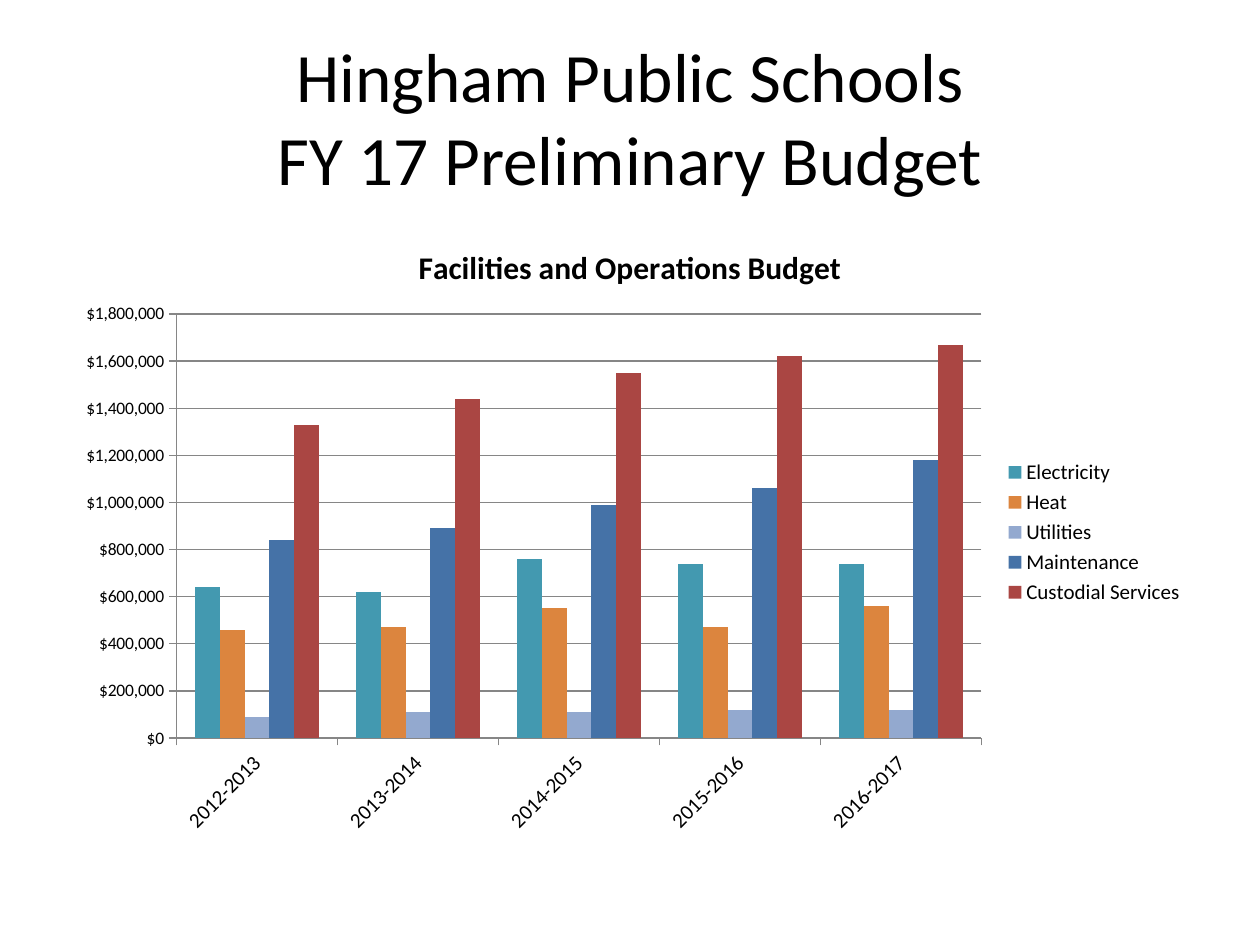
from lxml import etree
from pptx import Presentation
from pptx.chart.data import CategoryChartData
from pptx.dml.color import RGBColor
from pptx.enum import chart as charts, text
from pptx.oxml import parse_xml
from pptx.oxml.ns import nsdecls, qn
from pptx.util import Pt

FONT = "Calibri"
BLACK = RGBColor(0x00, 0x00, 0x00)
GRAY = RGBColor(0x86, 0x86, 0x86)
TEAL = RGBColor(0x43, 0x99, 0xB0)
ORANGE = RGBColor(0xDC, 0x85, 0x3E)
LIGHT_BLUE = RGBColor(0x93, 0xA9, 0xCF)
BLUE = RGBColor(0x45, 0x72, 0xA7)
RED = RGBColor(0xAA, 0x46, 0x43)

YEARS = [f"{year}-{year + 1}" for year in range(2012, 2017)]
BUDGETS = [
    ("Electricity", TEAL, (640000, 620000, 760000, 740000, 740000)),
    ("Heat", ORANGE, (460000, 470000, 550000, 470000, 560000)),
    ("Utilities", LIGHT_BLUE, (90000, 110000, 110000, 120000, 120000)),
    ("Maintenance", BLUE, (840000, 890000, 990000, 1060000, 1180000)),
    ("Custodial Services", RED, (1330000, 1440000, 1550000, 1620000, 1670000)),
]


def set_font(font, size, bold=False):
    font.name = FONT
    font.size = Pt(size)
    font.bold = bold
    font.color.rgb = BLACK


def write_text(frame, wording, size, bold=False, align=text.PP_ALIGN.CENTER):
    paragraph = frame.paragraphs[0]
    paragraph.text = wording
    paragraph.alignment = align
    for run in paragraph.runs:
        set_font(run.font, size, bold)


def add_title(slide, wording):
    box = slide.shapes.add_textbox(Pt(36), Pt(21.6), Pt(648), Pt(90))
    box.text_frame.word_wrap = True
    box.text_frame.vertical_anchor = text.MSO_ANCHOR.MIDDLE
    write_text(box.text_frame, wording, size=39.6)


def place_plot(chart, **fractions):
    """Fix the inner plot area as fractions of the chart's size."""
    plot_area = chart._chartSpace.chart.plotArea
    for old in plot_area.findall(qn("c:layout")):
        plot_area.remove(old)
    layout = parse_xml(
        f'<c:layout {nsdecls("c")}><c:manualLayout><c:layoutTarget val="inner"/>'
        '<c:xMode val="edge"/><c:yMode val="edge"/></c:manualLayout></c:layout>')
    for name, value in fractions.items():
        etree.SubElement(layout[0], qn(f"c:{name}")).set("val", str(value))
    plot_area.insert(0, layout)


def style_axis(axis, size):
    set_font(axis.tick_labels.font, size)
    axis.major_tick_mark = charts.XL_TICK_MARK.OUTSIDE
    axis.minor_tick_mark = charts.XL_TICK_MARK.NONE
    axis.format.line.color.rgb = GRAY
    axis.format.line.width = Pt(0.75)


def style_axes(chart):
    years, dollars = chart.category_axis, chart.value_axis
    style_axis(years, 12)
    years._element.txPr.bodyPr.set("rot", "-2700000")
    style_axis(dollars, 10)
    dollars.minimum_scale = 0
    dollars.maximum_scale = 1800000
    dollars.major_unit = 200000
    dollars.tick_labels.number_format = '"$"#,##0'
    dollars.tick_labels.number_format_is_linked = False
    dollars.major_gridlines.format.line.color.rgb = GRAY
    dollars.major_gridlines.format.line.width = Pt(0.75)


def add_budget_chart(slide):
    data = CategoryChartData(number_format='"$"#,##0')
    data.categories = YEARS
    for name, _, amounts in BUDGETS:
        data.add_series(name, amounts)
    chart = slide.shapes.add_chart(
        charts.XL_CHART_TYPE.COLUMN_CLUSTERED,
        Pt(36), Pt(126), Pt(648), Pt(356.4), data).chart
    set_font(chart.font, 10)

    chart.has_title = True
    write_text(chart.chart_title.text_frame, "Facilities and Operations Budget",
               size=18, bold=True)
    chart.chart_title.include_in_layout = False

    chart.has_legend = True
    chart.legend.position = charts.XL_LEGEND_POSITION.RIGHT
    chart.legend.include_in_layout = False
    set_font(chart.legend.font, 12)

    plot = chart.plots[0]
    plot.gap_width = 150
    plot.overlap = 0
    plot.vary_by_categories = False
    for series, (_, color, _) in zip(plot.series, BUDGETS):
        series.format.fill.solid()
        series.format.fill.fore_color.rgb = color

    style_axes(chart)
    place_plot(chart, x=0.1, y=0.15, w=0.71, h=0.68)


def main():
    presentation = Presentation()
    presentation.slide_width = Pt(720)
    presentation.slide_height = Pt(540)
    slide = presentation.slides.add_slide(presentation.slide_layouts[6])
    add_title(slide, "Hingham Public Schools\nFY 17 Preliminary Budget")
    add_budget_chart(slide)
    presentation.save("out.pptx")


if __name__ == "__main__":
    main()
